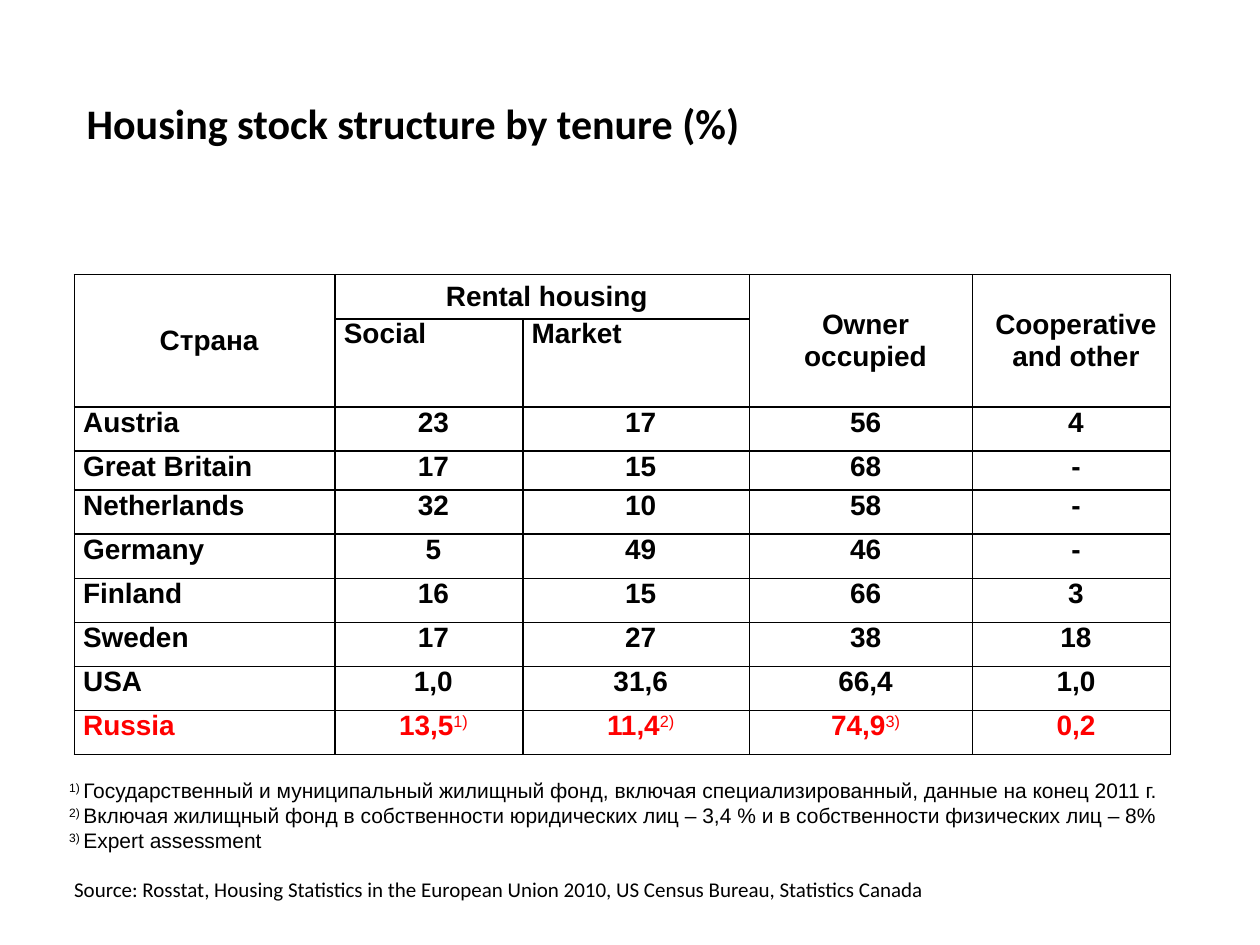
import pptx
import pptx.util
import pptx.dml.color
import pptx.enum.text
import pptx.oxml
import pptx.oxml.ns

Inches, Pt = pptx.util.Inches, pptx.util.Pt
ALIGN = pptx.enum.text.PP_ALIGN
ANCHOR = pptx.enum.text.MSO_ANCHOR
COLORS = {"text": "000000", "russia": "FF0000", "cell": "FFFFFF", "border": "000000"}


class TenureSlide:
    """Holds the slide and the style of its elements."""

    cell_opacity = 23
    border_width = 1
    cell_margins = {"margin_left": Inches(0.07), "margin_right": 0,
                    "margin_top": 0, "margin_bottom": 0}

    def __init__(self, deck):
        self.slide = deck.slides.add_slide(deck.slide_layouts[6])

    def add_runs(self, paragraph, runs, font, color="text", align=ALIGN.LEFT):
        """Fill a paragraph from (text, is_superscript) pairs."""
        paragraph.alignment = align
        for text, superscript in runs:
            run = paragraph.add_run()
            run.text = text
            for name, value in font.items():
                setattr(run.font, name, value)
            run.font.color.rgb = pptx.dml.color.RGBColor.from_string(COLORS[color])
            if superscript:
                run.font.bold = False
                run._r.get_or_add_rPr().set("baseline", "30000")

    def text(self, box, paragraphs, font, align=ALIGN.LEFT, frame_format=None):
        frame = self.slide.shapes.add_textbox(*map(Inches, box)).text_frame
        frame.word_wrap = True
        for name, value in (frame_format or {}).items():
            setattr(frame, name, value)
        for index, runs in enumerate(paragraphs):
            paragraph = frame.add_paragraph() if index else frame.paragraphs[0]
            self.add_runs(paragraph, runs, font, align=align)

    def table(self, box, widths, heights):
        table = self.slide.shapes.add_table(
            len(heights), len(widths), *map(Inches, box)).table
        table.first_row = table.horz_banding = False
        for column, width in zip(table.columns, widths):
            column.width = Inches(width)
        for row, height in zip(table.rows, heights):
            row.height = Inches(height)
        for cell in table.iter_cells():
            self.style_cell(cell)
        return table

    def style_cell(self, cell):
        for name, value in self.cell_margins.items():
            setattr(cell, name, value)
        properties = cell._tc.get_or_add_tcPr()
        for side in "LRTB":
            properties.append(pptx.oxml.parse_xml(
                f'<a:ln{side} {pptx.oxml.ns.nsdecls("a")} w="{Pt(self.border_width)}">'
                f'<a:solidFill><a:srgbClr val="{COLORS["border"]}"/></a:solidFill>'
                f'</a:ln{side}>'))
        cell.fill.solid()
        cell.fill.fore_color.rgb = pptx.dml.color.RGBColor.from_string(COLORS["cell"])
        fill_color = properties.find(
            f'{pptx.oxml.ns.qn("a:solidFill")}/{pptx.oxml.ns.qn("a:srgbClr")}')
        fill_color.append(pptx.oxml.parse_xml(
            f'<a:alpha {pptx.oxml.ns.nsdecls("a")} val="{self.cell_opacity * 1000}"/>'))

    def cell_text(self, cell, runs, font, color="text", align=ALIGN.LEFT, anchor=ANCHOR.TOP):
        cell.vertical_anchor = anchor
        self.add_runs(cell.text_frame.paragraphs[0], runs, font, color, align)


# Header cells: row, column, last row, last column, text
HEADERS = [
    (0, 0, 1, 0, "Страна"),
    (0, 1, 0, 2, "Rental housing"),
    (0, 3, 1, 3, "Owner occupied"),
    (0, 4, 1, 4, "Cooperative and other"),
    (1, 1, 1, 1, "Social"),
    (1, 2, 1, 2, "Market"),
]
# Country, social, market, owner occupied, cooperative and other
COUNTRIES = [
    ("Austria", "23", "17", "56", "4"),
    ("Great Britain", "17", "15", "68", "-"),
    ("Netherlands", "32", "10", "58", "-"),
    ("Germany", "5", "49", "46", "-"),
    ("Finland", "16", "15", "66", "3"),
    ("Sweden", "17", "27", "38", "18"),
    ("USA", "1,0", "31,6", "66,4", "1,0"),
    ("Russia", "13,5", "11,4", "74,9", "0,2"),
]
RUSSIA_NOTES = {1: "1)", 2: "2)", 3: "3)"}
FOOTNOTES = [
    "Государственный и муниципальный жилищный фонд, включая специализированный, "
    "данные на конец 2011 г.",
    "Включая жилищный фонд в собственности юридических лиц – 3,4 % "
    "и в собственности физических лиц – 8%",
    "Expert assessment",
]
SOURCE = ("Source: Rosstat, Housing Statistics in the European Union 2010, "
          "US Census Bureau, Statistics Canada")


def main():
    deck = pptx.Presentation()
    deck.slide_width, deck.slide_height = Inches(10), Inches(7.5)
    tenure = TenureSlide(deck)

    # Title
    tenure.text((0.59, 0.21, 9.33, 1.53), [[("Housing stock structure by tenure (%)", False)]],
                {"name": "Calibri", "size": Pt(24), "bold": True},
                frame_format={"vertical_anchor": ANCHOR.MIDDLE})

    # Table header
    table_font = {"name": "Arial", "size": Pt(16), "bold": True}
    heights = [0.35, 0.7, 0.35, 0.31] + [0.35] * 6
    housing = tenure.table((0.59, 2.18, 8.7, 3.83), [2.07, 1.49, 1.8, 1.77, 1.57], heights)
    for top, left, bottom, right, label in HEADERS:
        cell = housing.cell(top, left)
        layout = {}
        if (top, left) != (bottom, right):
            cell.merge(housing.cell(bottom, right))
            layout = {"align": ALIGN.CENTER, "anchor": ANCHOR.MIDDLE}
        tenure.cell_text(cell, [(label, False)], table_font, **layout)

    # Country rows
    for row, country in enumerate(COUNTRIES, start=2):
        is_russia = country[0] == "Russia"
        for column, value in enumerate(country):
            runs = [(value, False)]
            if is_russia and column in RUSSIA_NOTES:
                runs.append((RUSSIA_NOTES[column], True))
            tenure.cell_text(housing.cell(row, column), runs, table_font,
                             "russia" if is_russia else "text",
                             ALIGN.CENTER if column else ALIGN.LEFT)

    # Footnotes and source
    grow = {"auto_size": pptx.enum.text.MSO_AUTO_SIZE.SHAPE_TO_FIT_TEXT}
    tenure.text((0.45, 6.12, 9.28, 0.71),
                [[(f"{number}) ", True), (note, False)]
                 for number, note in enumerate(FOOTNOTES, start=1)],
                {"name": "Arial", "size": Pt(12)}, frame_format=grow)
    tenure.text((0.49, 6.91, 8.94, 0.3), [[(SOURCE, False)]],
                {"name": "Calibri", "size": Pt(12)}, ALIGN.JUSTIFY, grow)

    deck.save("out.pptx")


if __name__ == "__main__":
    main()
